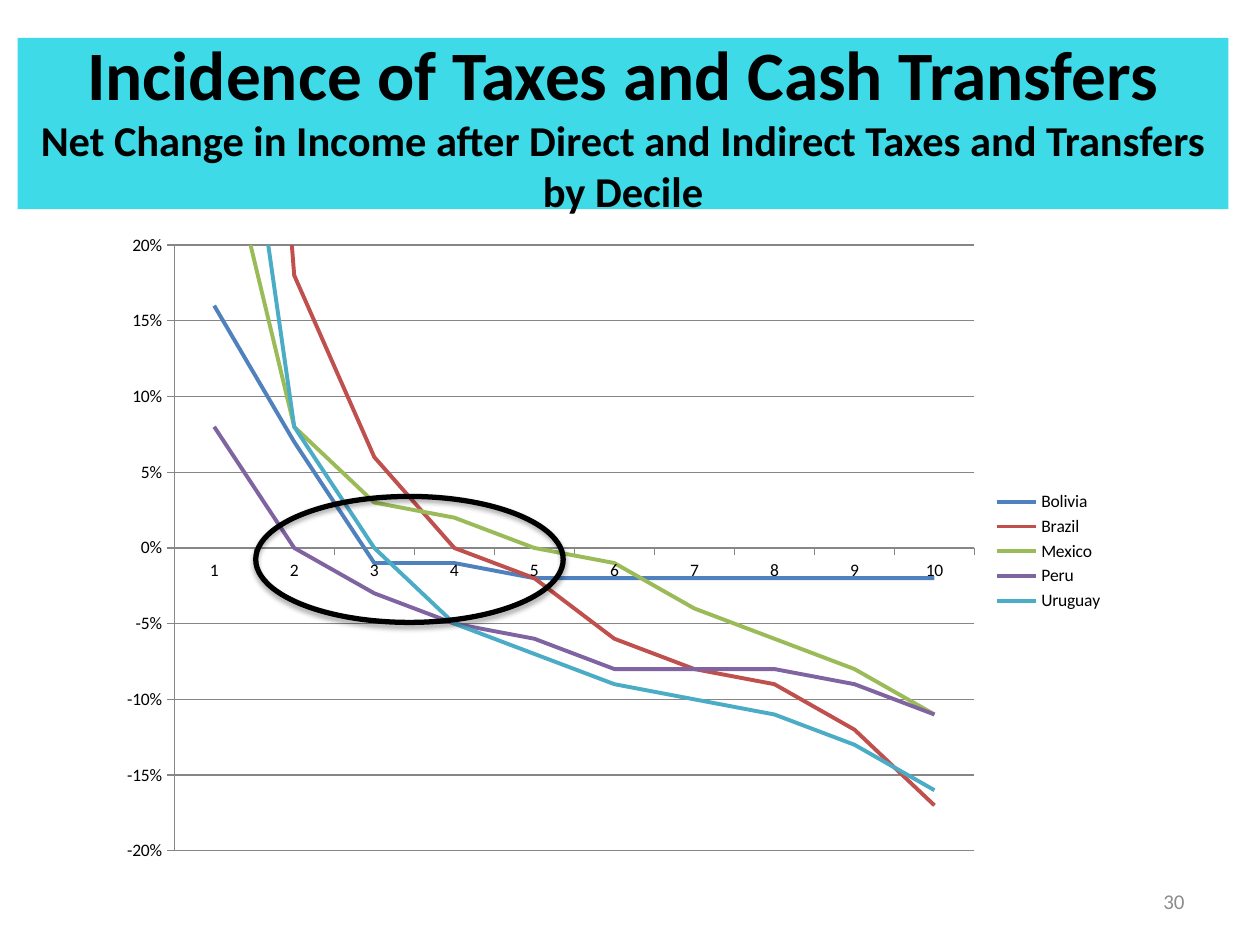
from dataclasses import dataclass

import lxml.etree
import pptx
import pptx.chart.data
import pptx.dml.color
import pptx.enum.chart
import pptx.enum.shapes
import pptx.enum.text
import pptx.oxml
import pptx.oxml.ns
import pptx.util

WIDTH, HEIGHT = 10, 7.5
FONT = "Calibri"
COLORS = {
    "black": "000000",
    "banner": "3EDAE7",
    "page": "8C8C8C",
    "grid": "868686",
    "blue": "4F81BD",
    "red": "C0504D",
    "green": "9BBB59",
    "purple": "8064A2",
    "aqua": "4BACC6",
}


@dataclass
class Box:
    """A frame in inches."""
    left: float
    top: float
    width: float
    height: float

    def emu(self) -> list:
        return [pptx.util.Inches(v) for v in (self.left, self.top, self.width, self.height)]


@dataclass
class Country:
    name: str
    color: str
    percents: list[int]  # net change in income, deciles 1 to 10


COUNTRIES = [
    Country("Bolivia", "blue", [16, 7, -1, -1, -2, -2, -2, -2, -2, -2]),
    Country("Brazil", "red", [85, 18, 6, 0, -2, -6, -8, -9, -12, -17]),
    Country("Mexico", "green", [30, 8, 3, 2, 0, -1, -4, -6, -8, -11]),
    Country("Peru", "purple", [8, 0, -3, -5, -6, -8, -8, -8, -9, -11]),
    Country("Uruguay", "aqua", [45, 8, 0, -5, -7, -9, -10, -11, -13, -16]),
]


def rgb(name: str) -> pptx.dml.color.RGBColor:
    return pptx.dml.color.RGBColor.from_string(COLORS[name])


def set_font(font, size: float, color: str = "black", bold: bool = False) -> None:
    font.name, font.size, font.bold = FONT, pptx.util.Pt(size), bold
    font.color.rgb = rgb(color)


def set_line(line, color: str, width: float) -> None:
    line.color.rgb = rgb(color)
    line.width = pptx.util.Pt(width)


def add_text(sp, lines: list[tuple[str, float]], *, align: str, color: str = "black",
             bold: bool = False) -> None:
    """Write (text, size) lines as one paragraph, centred vertically."""
    tf = sp.text_frame
    tf.word_wrap = True
    tf.vertical_anchor = pptx.enum.text.MSO_ANCHOR.MIDDLE
    p = tf.paragraphs[0]
    p.alignment = pptx.enum.text.PP_ALIGN[align]
    for i, (text, size) in enumerate(lines):
        if i:
            p.add_line_break()
        r = p.add_run()
        r.text = text
        set_font(r.font, size, color, bold)


def add_banner(s, box: Box) -> None:
    sp = s.shapes.add_shape(pptx.enum.shapes.MSO_SHAPE.RECTANGLE, *box.emu())
    sp.shadow.inherit = False
    sp.fill.solid()
    sp.fill.fore_color.rgb = rgb("banner")
    sp.line.fill.background()
    add_text(sp, [
        ("Incidence of Taxes and Cash Transfers", 39.6),
        ("Net Change in Income after Direct and Indirect Taxes and Transfers by Decile", 24.3),
    ], align="CENTER", bold=True)


def set_plot_area(chart, x: float, y: float, w: float, h: float) -> None:
    """Fix the inner plot area, in shares of the chart's size."""
    sizes = "".join(f'<c:{tag} val="{val}"/>' for tag, val in zip("xywh", (x, y, w, h)))
    layout = pptx.oxml.parse_xml(
        f'<c:layout {pptx.oxml.ns.nsdecls("c")}><c:manualLayout><c:layoutTarget val="inner"/>'
        f'<c:xMode val="edge"/><c:yMode val="edge"/>{sizes}</c:manualLayout></c:layout>')
    plot_area = chart.plots[0]._element.getparent()
    for old in plot_area.findall(pptx.oxml.ns.qn("c:layout")):
        plot_area.remove(old)
    plot_area.insert(0, layout)


def add_decile_chart(s, box: Box) -> None:
    data = pptx.chart.data.CategoryChartData(number_format="0%")
    data.categories = range(1, 11)
    for country in COUNTRIES:
        data.add_series(country.name, [v / 100 for v in country.percents])
    chart = s.shapes.add_chart(pptx.enum.chart.XL_CHART_TYPE.LINE, *box.emu(), data).chart
    chart.has_title = False
    set_font(chart.font, 10)
    set_plot_area(chart, 0.07, 0.03, 0.79, 0.93)

    chart.has_legend = True
    chart.legend.position = pptx.enum.chart.XL_LEGEND_POSITION.RIGHT
    chart.legend.include_in_layout = False

    axis = chart.value_axis
    axis.minimum_scale, axis.maximum_scale, axis.major_unit = -0.2, 0.2, 0.05
    axis.has_major_gridlines = True
    set_line(axis.major_gridlines.format.line, "grid", 0.75)
    axis.tick_labels.number_format = "0%"
    axis.tick_labels.number_format_is_linked = False
    for ax in (axis, chart.category_axis):
        ax.major_tick_mark = pptx.enum.chart.XL_TICK_MARK.OUTSIDE
        set_line(ax.format.line, "grid", 0.75)

    chart.plots[0].vary_by_categories = False
    for series, country in zip(chart.plots[0].series, COUNTRIES):
        series.smooth = False
        series.marker.style = pptx.enum.chart.XL_MARKER_STYLE.NONE
        set_line(series.format.line, country.color, 2.25)


def add_highlight(s, box: Box) -> None:
    """Ring the deciles where the net change turns negative."""
    sp = s.shapes.add_shape(pptx.enum.shapes.MSO_SHAPE.OVAL, *box.emu())
    sp.fill.background()
    set_line(sp.line, "black", 3)
    sp.shadow.inherit = False
    effects = sp._element.spPr.find(pptx.oxml.ns.qn("a:effectLst"))
    shadow = lxml.etree.SubElement(
        effects, pptx.oxml.ns.qn("a:outerShdw"), blurRad=str(pptx.util.Pt(3.1)),
        dist=str(pptx.util.Pt(1.8)), dir="5400000", rotWithShape="0")
    color = lxml.etree.SubElement(shadow, pptx.oxml.ns.qn("a:srgbClr"), val=COLORS["black"])
    lxml.etree.SubElement(color, pptx.oxml.ns.qn("a:alpha"), val="35000")


def main() -> None:
    prs = pptx.Presentation()
    prs.slide_width, prs.slide_height = pptx.util.Inches(WIDTH), pptx.util.Inches(HEIGHT)
    s = prs.slides.add_slide(prs.slide_layouts[6])
    add_banner(s, Box(0.14, 0.04 * HEIGHT, 9.61, 1.36))
    page = s.shapes.add_textbox(*Box(7.17, 6.95, 2.33, 0.4).emu())
    add_text(page, [("30", 12)], align="RIGHT", color="page")
    add_decile_chart(s, Box(0.82, 1.79, 8.04, 5.17))
    add_highlight(s, Box(2.03, 3.94, 2.44, 1))
    prs.save("out.pptx")


if __name__ == "__main__":
    main()
